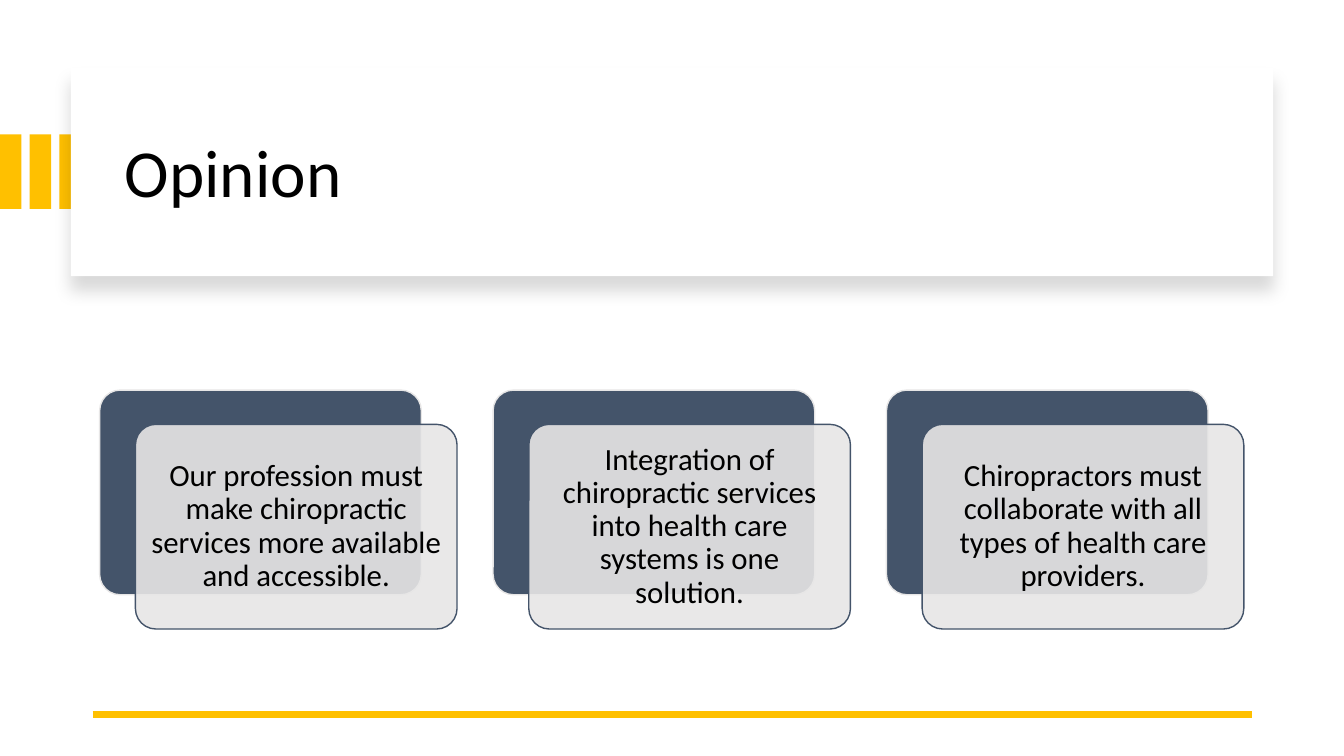
from dataclasses import dataclass

from lxml.etree import SubElement
from pptx import Presentation
from pptx.dml.color import RGBColor
from pptx.enum.shapes import MSO_CONNECTOR, MSO_SHAPE
from pptx.enum.text import MSO_ANCHOR as Anchor, PP_ALIGN as Align
from pptx.oxml.ns import qn
from pptx.util import Inches, Pt

GOLD, NAVY, PALE, WHITE, BLACK = "FFC000", "44546A", "E7E6E6", "FFFFFF", "000000"
FONT = "Calibri"

presentation = Presentation()
presentation.slide_width = Inches(13.33)
presentation.slide_height = Inches(7.5)
slide = presentation.slides.add_slide(presentation.slide_layouts[6])


@dataclass(frozen=True)
class Box:
    """Position and size in percent of the slide."""
    left: float
    top: float
    width: float
    height: float

    def shifted(self, across: float, down: float = 0) -> "Box":
        return Box(self.left + across, self.top + down, self.width, self.height)

    def lengths(self) -> tuple[int, int, int, int]:
        return (across_slide(self.left), down_slide(self.top),
                across_slide(self.width), down_slide(self.height))


STRIPE = Box(0, 17.78, 1.6, 9.87)
STRIPE_PITCH = 2.21
PANEL = Box(5.28, 8.93, 89.45, 27.6)
TITLE = Box(8.55, 11.87, 83.5, 22.67)
CARD = Box(7.42, 51.6, 23.93, 27.07)
CARD_PITCH = 29.27
FRONT_ACROSS, FRONT_DOWN = 2.66, 4.53
RULE_LEFT, RULE_RIGHT, RULE_TOP = 6.9, 93.15, 94.53

OPINIONS = [
    "Our profession must make chiropractic services more available and accessible.",
    "Integration of chiropractic services into health care systems is one solution.",
    "Chiropractors must collaborate with all types of health care providers.",
]


def across_slide(percent: float) -> int:
    return round(presentation.slide_width * percent / 100)


def down_slide(percent: float) -> int:
    return round(presentation.slide_height * percent / 100)


def colour(value: str) -> RGBColor:
    return RGBColor.from_string(value)


def add_block(box: Box, fill: str, line: str | None = None, rounded: bool = False):
    kind = MSO_SHAPE.ROUNDED_RECTANGLE if rounded else MSO_SHAPE.RECTANGLE
    shape = slide.shapes.add_shape(kind, *box.lengths())
    shape.shadow.inherit = False
    shape.fill.solid()
    shape.fill.fore_color.rgb = colour(fill)
    if line:
        shape.line.color.rgb = colour(line)
        shape.line.width = Pt(1)
    else:
        shape.line.fill.background()
    if rounded:
        shape.adjustments[0] = 0.1
    return shape


def set_opacity(parent, percent: int) -> None:
    SubElement(parent, qn("a:alpha")).set("val", str(percent * 1000))


def add_soft_shadow(shape) -> None:
    effects = shape._element.spPr.find(qn("a:effectLst"))
    shadow = SubElement(effects, qn("a:outerShdw"), blurRad=str(Pt(11)),
                        dist=str(Pt(10)), dir="5400000", algn="t", rotWithShape="0")
    set_opacity(SubElement(shadow, qn("a:srgbClr"), val=BLACK), 15)


def write(shape, text: str, size: int, align: Align = Align.LEFT,
          margin: float = 0.1) -> None:
    frame = shape.text_frame
    frame.word_wrap = True
    frame.vertical_anchor = Anchor.MIDDLE
    frame.margin_left = frame.margin_right = Inches(margin)
    frame.margin_top = frame.margin_bottom = Inches(margin)
    paragraph = frame.paragraphs[0]
    paragraph.text = text
    paragraph.alignment = align
    paragraph.line_spacing = 0.9
    paragraph.font.name = FONT
    paragraph.font.size = Pt(size)
    paragraph.font.color.rgb = colour(BLACK)


def add_rule(left: float, right: float, top: float) -> None:
    rule = slide.shapes.add_connector(
        MSO_CONNECTOR.STRAIGHT, across_slide(left), down_slide(top),
        across_slide(right), down_slide(top))
    rule.line.color.rgb = colour(GOLD)
    rule.line.width = Pt(4.5)
    SubElement(rule._element.spPr, qn("a:effectLst"))


def add_card(box: Box, text: str) -> None:
    add_block(box, NAVY, line=PALE, rounded=True)
    front = add_block(box.shifted(FRONT_ACROSS, FRONT_DOWN), PALE, line=NAVY, rounded=True)
    set_opacity(front._element.spPr.find(qn("a:solidFill"))[0], 90)
    write(front, text, size=22, align=Align.CENTER, margin=0.08)


def main() -> None:
    for index in range(3):
        add_block(STRIPE.shifted(index * STRIPE_PITCH), GOLD)
    add_soft_shadow(add_block(PANEL, WHITE))
    write(slide.shapes.add_textbox(*TITLE.lengths()), "Opinion", size=48)
    add_rule(RULE_LEFT, RULE_RIGHT, RULE_TOP)
    for index, opinion in enumerate(OPINIONS):
        add_card(CARD.shifted(index * CARD_PITCH), opinion)
    presentation.save("out.pptx")


if __name__ == "__main__":
    main()
